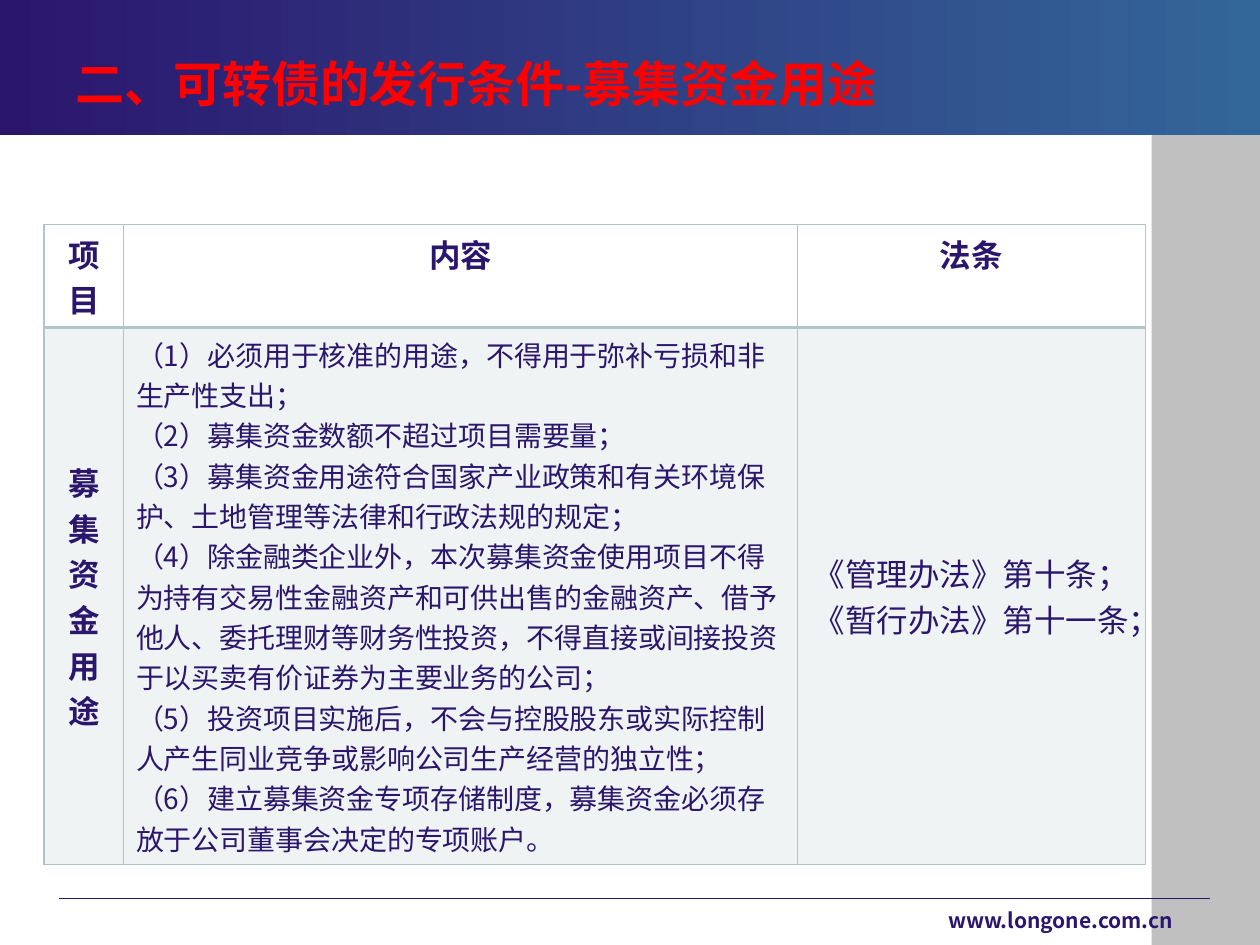
from lxml.etree import SubElement
from pptx import Presentation
from pptx.dml.color import RGBColor
from pptx.enum.shapes import MSO_CONNECTOR as Connector, MSO_SHAPE as Shape
from pptx.enum.text import MSO_ANCHOR as Anchor, PP_ALIGN as Align
from pptx.oxml.ns import qn
from pptx.util import Inches, Pt

TITLE = "二、可转债的发行条件-募集资金用途"
WEBSITE = "www.longone.com.cn"
HEADERS = ["项目", "内容", "法条"]
TOPIC = ["募集资金用途"]
CONDITIONS = [
    "（1）必须用于核准的用途，不得用于弥补亏损和非生产性支出；",
    "（2）募集资金数额不超过项目需要量；",
    "（3）募集资金用途符合国家产业政策和有关环境保护、土地管理等法律和行政法规的规定；",
    "（4）除金融类企业外，本次募集资金使用项目不得为持有交易性金融资产和可供出售的金融资产、借予他人、委托理财等财务性投资，不得直接或间接投资于以买卖有价证券为主要业务的公司；",
    "（5）投资项目实施后，不会与控股股东或实际控制人产生同业竞争或影响公司生产经营的独立性；",
    "（6）建立募集资金专项存储制度，募集资金必须存放于公司董事会决定的专项账户。",
]
ARTICLES = ["《管理办法》第十条；", "《暂行办法》第十一条；"]

THEME = {
    "font": "Noto Sans CJK SC",
    "navy": "2B166E", "blue": "336699", "red": "FF0000",
    "silver": "C0C0C0", "sage": "B0C6C6", "tint": 20000,
    "title": 28, "heading": 18, "body": 16, "footer": 12,
}
WIDTH, HEIGHT = 10, 7.5
BANNER = 1.07
SIDEBAR_LEFT = 9.14
RULE_TOP = 7.13
TABLE_LEFT, TABLE_TOP = 0.35, 1.78
COLUMNS = [0.63, 5.35, 2.76]
ROWS = [0.82, 4.26]


def color(name):
    return RGBColor.from_string(THEME[name])


def write(frame, lines, size, ink="navy", bold=False, align=Align.LEFT, anchor=Anchor.TOP):
    frame.word_wrap = True
    frame.vertical_anchor = anchor
    for index, line in enumerate(lines):
        paragraph = frame.paragraphs[0] if index == 0 else frame.add_paragraph()
        paragraph.alignment = align
        run = paragraph.add_run()
        run.text = line
        values = {"size": Pt(THEME[size]), "bold": bold, "name": THEME["font"]}
        for name, value in values.items():
            setattr(run.font, name, value)
        run.font.color.rgb = color(ink)
        SubElement(run.font._element, qn("a:ea"), typeface=THEME["font"])


def add_text(slide, box, *content, **formats):
    textbox = slide.shapes.add_textbox(*map(Inches, box))
    write(textbox.text_frame, *content, **formats)


def add_panel(slide, *box):
    panel = slide.shapes.add_shape(Shape.RECTANGLE, *map(Inches, box))
    panel.shadow.inherit = False
    panel.line.fill.background()
    return panel


def add_background(slide):
    sidebar = add_panel(slide, SIDEBAR_LEFT, BANNER, WIDTH - SIDEBAR_LEFT, HEIGHT - BANNER)
    sidebar.fill.solid()
    sidebar.fill.fore_color.rgb = color("silver")

    rule = slide.shapes.add_connector(
        Connector.STRAIGHT, *map(Inches, (0.47, RULE_TOP, 9.6, RULE_TOP)))
    rule.line.color.rgb = color("navy")
    rule.line.width = Pt(0.75)
    SubElement(rule._element.spPr, qn("a:effectLst"))

    banner = add_panel(slide, 0, 0, WIDTH, BANNER)
    banner.fill.gradient()
    banner.fill.gradient_angle = 0
    for stop, position, name in zip(banner.fill.gradient_stops, (0, 1), ("navy", "blue")):
        stop.position = position
        stop.color.rgb = color(name)


def set_borders(cell, widths):
    properties = cell._tc.get_or_add_tcPr()
    for side, width in zip("LRTB", widths):
        border = SubElement(properties, qn(f"a:ln{side}"), w=str(Pt(width)))
        fill = SubElement(border, qn("a:solidFill"))
        SubElement(fill, qn("a:srgbClr"), val=THEME["sage"])


def set_tint(cell):
    cell.fill.solid()
    cell.fill.fore_color.rgb = color("sage")
    shade = cell._tc.tcPr.find(qn("a:solidFill")).find(qn("a:srgbClr"))
    SubElement(shade, qn("a:alpha"), val=str(THEME["tint"]))


def add_conditions_table(slide):
    box = (TABLE_LEFT, TABLE_TOP, sum(COLUMNS), sum(ROWS))
    table = slide.shapes.add_table(len(ROWS), len(COLUMNS), *map(Inches, box)).table
    table.first_row = table.horz_banding = False
    for column, width in zip(table.columns, COLUMNS):
        column.width = Inches(width)
    for row, height in zip(table.rows, ROWS):
        row.height = Inches(height)

    heading = {"size": "heading", "bold": True, "align": Align.CENTER}
    centered = {"align": Align.CENTER, "anchor": Anchor.MIDDLE}
    body = [
        (TOPIC, {**heading, **centered}),
        (CONDITIONS, {"size": "body"}),
        (ARTICLES, {"size": "heading", **centered}),
    ]
    for index, (header, (lines, formats)) in enumerate(zip(HEADERS, body)):
        top, bottom = table.cell(0, index), table.cell(1, index)
        set_borders(top, (1, 1, 1, 2))
        set_borders(bottom, (1, 1, 2, 1))
        top.fill.background()
        set_tint(bottom)
        for cell, content, style in ((top, [header], heading), (bottom, lines, formats)):
            anchor = style.get("anchor", Anchor.TOP)
            write(cell.text_frame, content, **{**style, "anchor": anchor})
            cell.vertical_anchor = anchor


def main():
    presentation = Presentation()
    presentation.slide_width = Inches(WIDTH)
    presentation.slide_height = Inches(HEIGHT)
    slide = presentation.slides.add_slide(presentation.slide_layouts[6])
    add_background(slide)
    add_text(slide, (0.5, 0.35, 7.18, 0.62), [TITLE], "title",
             ink="red", bold=True, anchor=Anchor.MIDDLE)
    add_text(slide, (7.08, 7.15, 2.33, 0.35), [WEBSITE], "footer",
             bold=True, align=Align.RIGHT)
    add_conditions_table(slide)
    presentation.save("out.pptx")


if __name__ == "__main__":
    main()
